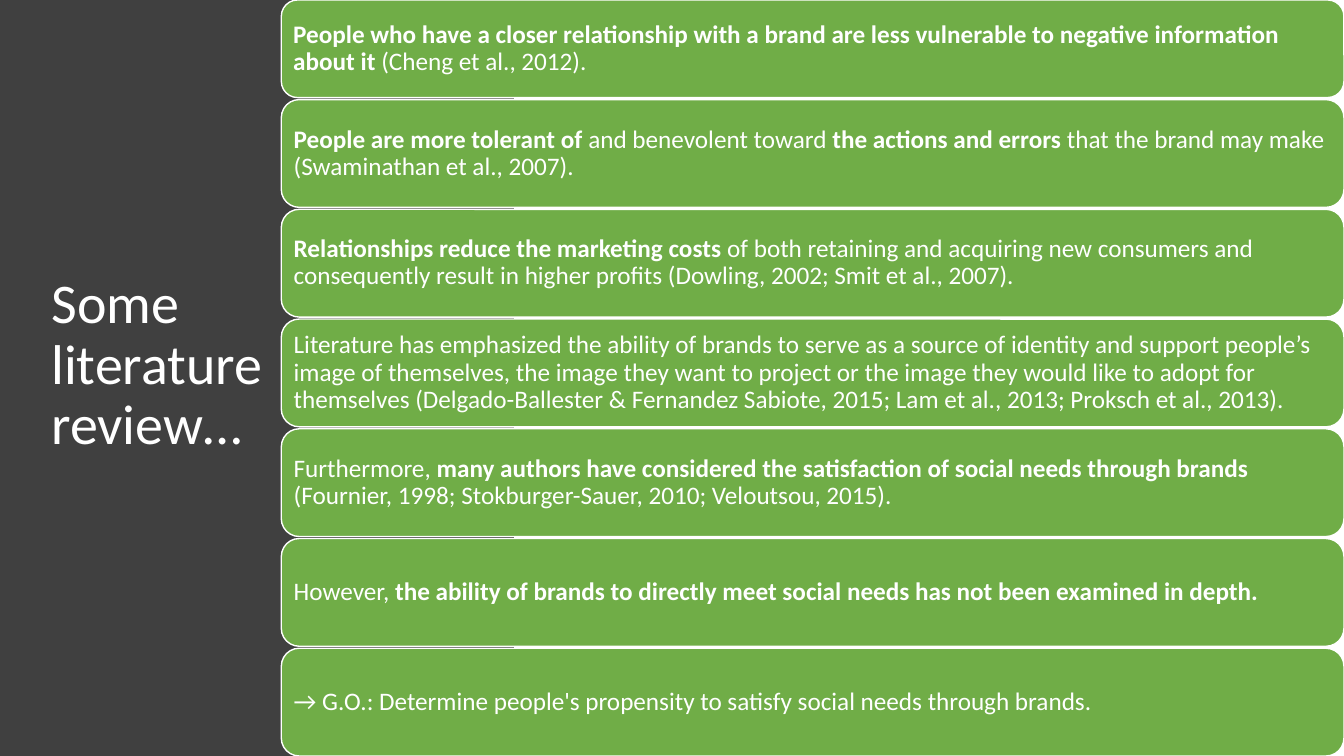
from dataclasses import dataclass

from pptx import Presentation
from pptx import util as u
from pptx.dml.color import RGBColor
from pptx.enum import shapes, text

TITLE = "Some literature review…"

# Each finding is a list of (words, bold) spans.
FINDINGS = [
    [("People who have a closer relationship with a brand are less vulnerable "
      "to negative information about it ", True),
     ("(Cheng et al., 2012).", False)],
    [("People are more tolerant of ", True),
     ("and benevolent toward ", False),
     ("the actions and errors ", True),
     ("that the brand may make (Swaminathan et al., 2007).", False)],
    [("Relationships reduce the marketing costs", True),
     (" of both retaining and acquiring new consumers and consequently result "
      "in higher profits (Dowling, 2002; Smit et al., 2007).", False)],
    [("Literature has emphasized the ability of brands to serve as a source of "
      "identity and support people’s image of themselves, the image they want "
      "to project or the image they would like to adopt for themselves "
      "(Delgado-Ballester & Fernandez Sabiote, 2015; Lam et al., 2013; "
      "Proksch et al., 2013).", False)],
    [("Furthermore, ", False),
     ("many authors have considered the satisfaction of social needs through "
      "brands ", True),
     ("(Fournier, 1998; Stokburger-Sauer, 2010; Veloutsou, 2015).", False)],
    [("However, ", False),
     ("the ability of brands to directly meet social needs has not been "
      "examined in depth.", True)],
    [("→ G.O.: Determine people's propensity to satisfy social needs through "
      "brands.", False)],
]


@dataclass(frozen=True)
class Theme:
    font: str = "Calibri"
    panel: RGBColor = RGBColor(0x40, 0x40, 0x40)
    card: RGBColor = RGBColor(0x70, 0xAD, 0x47)
    light: RGBColor = RGBColor(0xFF, 0xFF, 0xFF)
    title_size: u.Length = u.Pt(40)
    card_size: u.Length = u.Pt(18)
    outline: u.Length = u.Pt(1)


THEME = Theme()
PAGE_WIDTH, PAGE_HEIGHT = 33.87, 19.05
PANEL_WIDTH = 12.95
CARD_LEFT = 7.09
FIRST_HEIGHT = 2.46
GAP = 0.05
PADDING = 0.18


def style_span(span, size, bold=False):
    span.font.name = THEME.font
    span.font.size = size
    span.font.bold = bold
    span.font.color.rgb = THEME.light


def add_panel(page):
    panel = page.shapes.add_shape(shapes.MSO_SHAPE.RECTANGLE, 0, 0,
                                  u.Cm(PANEL_WIDTH), u.Cm(PAGE_HEIGHT))
    panel.shadow.inherit = False
    panel.fill.solid()
    panel.fill.fore_color.rgb = THEME.panel
    panel.line.fill.background()
    return panel


def fill_title(title):
    title.left, title.top = u.Cm(1.04), u.Cm(1.7)
    title.width, title.height = u.Cm(6.58), u.Cm(15.04)
    frame = title.text_frame
    frame.text = TITLE
    frame.word_wrap = True
    frame.auto_size = text.MSO_AUTO_SIZE.NONE
    frame.vertical_anchor = text.MSO_ANCHOR.MIDDLE
    para = frame.paragraphs[0]
    para.alignment = text.PP_ALIGN.LEFT
    para.line_spacing = 0.9
    style_span(para.runs[0], THEME.title_size)


def add_card(page, top, height, finding):
    card = page.shapes.add_shape(
        shapes.MSO_SHAPE.ROUNDED_RECTANGLE, u.Cm(CARD_LEFT), u.Cm(top),
        u.Cm(PAGE_WIDTH - CARD_LEFT), u.Cm(height))
    card.shadow.inherit = False
    card.fill.solid()
    card.fill.fore_color.rgb = THEME.card
    card.line.color.rgb = THEME.light
    card.line.width = THEME.outline

    frame = card.text_frame
    frame.word_wrap = True
    frame.vertical_anchor = text.MSO_ANCHOR.MIDDLE
    frame.margin_left = frame.margin_right = u.Cm(PADDING)
    frame.margin_top = frame.margin_bottom = u.Cm(PADDING)
    para = frame.paragraphs[0]
    para.alignment = text.PP_ALIGN.LEFT
    para.line_spacing = 0.9
    para.space_after = u.Pt(6.3)
    for words, bold in finding:
        span = para.add_run()
        span.text = words
        style_span(span, THEME.card_size, bold)


def add_cards(page):
    """Stack the findings: a shorter first card, then equal ones to the foot."""
    others = len(FINDINGS) - 1
    other_height = (PAGE_HEIGHT - FIRST_HEIGHT - others * GAP) / others
    top = 0
    for index, finding in enumerate(FINDINGS):
        height = other_height if index else FIRST_HEIGHT
        add_card(page, top, height, finding)
        top += height + GAP


def main():
    deck = Presentation()
    deck.slide_width, deck.slide_height = u.Cm(PAGE_WIDTH), u.Cm(PAGE_HEIGHT)
    page = deck.slides.add_slide(deck.slide_layouts.get_by_name("Title Only"))
    title = page.shapes.title
    panel = add_panel(page)
    title.element.addprevious(panel.element)  # the panel lies behind the title
    fill_title(title)
    add_cards(page)
    deck.save("out.pptx")


if __name__ == "__main__":
    main()
